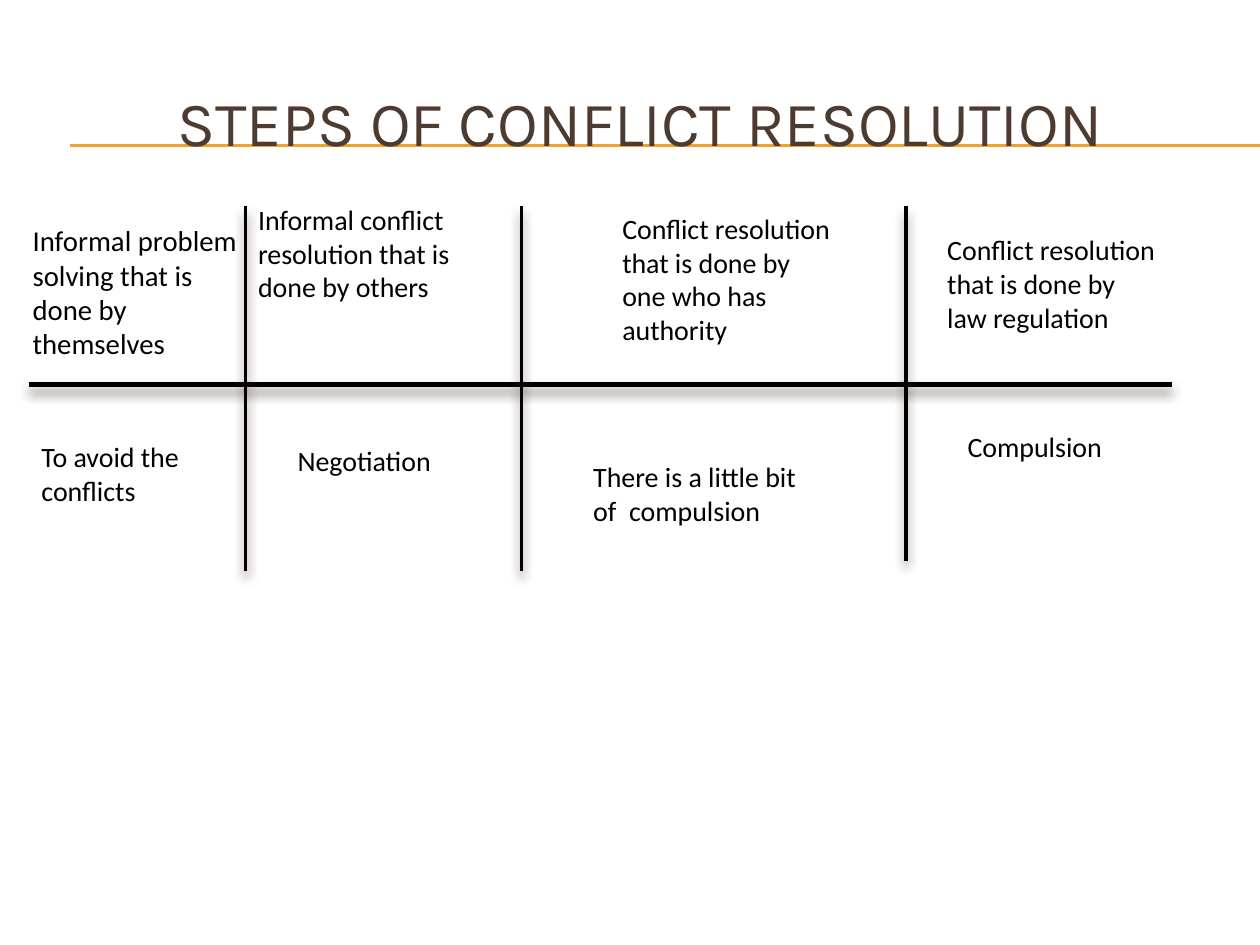
"""Build the slide on the steps of conflict resolution."""
import pptx
import pptx.dml.color
import pptx.enum.shapes
import pptx.enum.text
import pptx.oxml
import pptx.oxml.ns
import pptx.util

Pt = pptx.util.Pt
ALIGN = pptx.enum.text.PP_ALIGN
ANCHOR = pptx.enum.text.MSO_ANCHOR
BLACK, BROWN, GOLD = "000000", "4E3B30", "F0A22E"
SHADOW = (
    f'<a:effectLst {pptx.oxml.ns.nsdecls("a")}>'
    f'<a:outerShdw blurRad="{Pt(6)}" dist="{Pt(4)}" dir="5400000" rotWithShape="0">'
    f'<a:srgbClr val="{BROWN}"><a:alpha val="60000"/></a:srgbClr>'
    "</a:outerShdw></a:effectLst>"
)
NO_SHADOW = f'<a:effectLst {pptx.oxml.ns.nsdecls("a")}/>'


def rgb(value):
    return pptx.dml.color.RGBColor.from_string(value)


def add_text(s, text, box, size, font="Calibri", color=BLACK, align=ALIGN.LEFT, anchor=ANCHOR.TOP):
    tf = s.shapes.add_textbox(*[Pt(v) for v in box]).text_frame
    tf.word_wrap = True
    tf.vertical_anchor = anchor
    p = tf.paragraphs[0]
    p.alignment = align
    r = p.add_run()
    r.text = text
    r.font.size = Pt(size)
    r.font.name = font
    r.font.color.rgb = rgb(color)


prs = pptx.Presentation()
prs.slide_width, prs.slide_height = Pt(720), Pt(540)
s = prs.slides.add_slide(prs.slide_layouts[6])

rules = [(40.3, y, 720, y, GOLD, 0.75, NO_SHADOW) for y in (82.8, 83.5)]
axis = [(16.6, 219.6, 669.6, 219.6, BLACK, 3, SHADOW)]
dividers = [
    (x, 118, x, bottom, BLACK, 2, SHADOW)
    for x, bottom in ((140.4, 326.2), (298, 326.2), (517.7, 320.4))
]
for x1, y1, x2, y2, color, width, effect in rules + axis + dividers:
    line = s.shapes.add_connector(
        pptx.enum.shapes.MSO_CONNECTOR.STRAIGHT, Pt(x1), Pt(y1), Pt(x2), Pt(y2)
    )
    line.line.color.rgb = rgb(color)
    line.line.width = Pt(width)
    line._element.spPr.append(pptx.oxml.parse_xml(effect))

add_text(s, "STEPS OF CONFLICT RESOLUTION", (23.8, 36, 684, 66.2), 36,
         "Karla", BROWN, ALIGN.CENTER, ANCHOR.MIDDLE)

labels = [
    ("Informal problem solving that is done by themselves", 11.5, 123.8, 87.1, 16.4, ALIGN.LEFT),
    ("Informal conflict resolution that is done by others", 140.4, 112.3, 65.5, 16, ALIGN.LEFT),
    ("Conflict resolution that is done by one who has authority", 348.5, 117.4, 85, 16, ALIGN.LEFT),
    ("Conflict resolution that is done by law regulation", 534.2, 129.6, 65.5, 16, ALIGN.LEFT),
    ("To avoid the conflicts", 16.6, 247.7, 46.1, 16, ALIGN.LEFT),
    ("Negotiation", 140.4, 249.8, 26.6, 16, ALIGN.CENTER),
    ("There is a little bit of  compulsion", 331.9, 259.2, 46.1, 16, ALIGN.LEFT),
    ("Compulsion", 545.8, 241.9, 26.6, 16, ALIGN.LEFT),
]
for text, left, top, height, size, align in labels:
    add_text(s, text, (left, top, 135.4, height), size, align=align)

prs.save("out.pptx")
